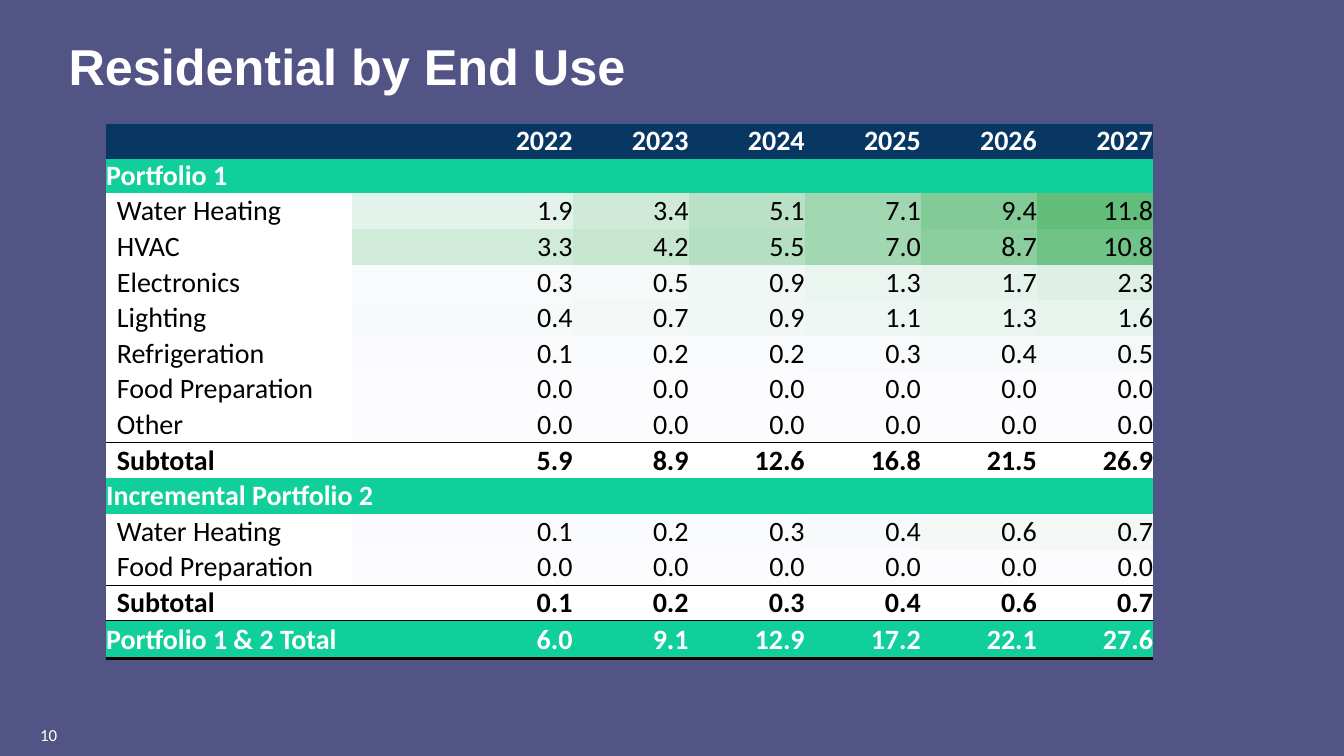
from lxml import etree
from pptx import Presentation
from pptx.dml.color import RGBColor
from pptx.enum.text import MSO_ANCHOR, PP_ALIGN
from pptx.oxml.ns import qn
from pptx.util import Inches, Pt

BACKGROUND = RGBColor(0x53, 0x54, 0x86)
NAVY = RGBColor(0x08, 0x37, 0x63)
GREEN = RGBColor(0x10, 0xCF, 0x9B)
WHITE = RGBColor(0xFF, 0xFF, 0xFF)
BLACK = RGBColor(0x00, 0x00, 0x00)
HEAT_LOW = RGBColor(0xFC, 0xFC, 0xFF)
HEAT_HIGH = RGBColor(0x63, 0xBE, 0x7B)
HEAT_MAXIMUM = 11.8
NO_STYLE_NO_GRID = "{2D5ABB26-0587-4C30-8999-92F81FD0307C}"

TABLE_WIDTH, TABLE_HEIGHT = 7.79, 3.98
LABEL_WIDTH, FIRST_YEAR_WIDTH = 1.83, 1.64
HEADING_HEIGHT, TOTAL_HEIGHT = 0.26, 0.28
HEADING_ROWS = 2

# Row kind, label, one value per year
ROWS = [
    ("header", "", "2022 2023 2024 2025 2026 2027"),
    ("section", "Portfolio 1", ""),
    ("item", "Water Heating", "1.9 3.4 5.1 7.1 9.4 11.8"),
    ("item", "HVAC", "3.3 4.2 5.5 7.0 8.7 10.8"),
    ("item", "Electronics", "0.3 0.5 0.9 1.3 1.7 2.3"),
    ("item", "Lighting", "0.4 0.7 0.9 1.1 1.3 1.6"),
    ("item", "Refrigeration", "0.1 0.2 0.2 0.3 0.4 0.5"),
    ("item", "Food Preparation", "0.0 0.0 0.0 0.0 0.0 0.0"),
    ("item", "Other", "0.0 0.0 0.0 0.0 0.0 0.0"),
    ("subtotal", "Subtotal", "5.9 8.9 12.6 16.8 21.5 26.9"),
    ("merged section", "Incremental Portfolio 2", ""),
    ("item", "Water Heating", "0.1 0.2 0.3 0.4 0.6 0.7"),
    ("item", "Food Preparation", "0.0 0.0 0.0 0.0 0.0 0.0"),
    ("subtotal", "Subtotal", "0.1 0.2 0.3 0.4 0.6 0.7"),
    ("total", "Portfolio 1 & 2 Total", "6.0 9.1 12.9 17.2 22.1 27.6"),
]
ROW_FILLS = {"header": NAVY, "section": GREEN, "merged section": GREEN,
             "item": WHITE, "subtotal": WHITE, "total": GREEN}


def heat_color(value):
    """Blend from the low to the high colour in proportion to the value."""
    share = value / HEAT_MAXIMUM
    return RGBColor(*(round(low + (high - low) * share)
                      for low, high in zip(HEAT_LOW, HEAT_HIGH)))


class SlideBuilder:
    def __init__(self, presentation):
        self.slide = presentation.slides.add_slide(presentation.slide_layouts[5])
        self.slide.background.fill.solid()
        self.slide.background.fill.fore_color.rgb = BACKGROUND

    def add_run(self, paragraph, text, size, color, bold=False, font="Calibri"):
        run = paragraph.add_run()
        run.text = text
        run.font.name = font
        run.font.size = Pt(size)
        run.font.bold = bold
        run.font.color.rgb = color

    def add_title(self, text):
        title = self.slide.shapes.title
        title.left, title.top = Inches(0.41), Inches(0.05)
        title.width, title.height = Inches(9.49), Inches(0.87)
        title.text_frame.vertical_anchor = MSO_ANCHOR.MIDDLE
        paragraph = title.text_frame.paragraphs[0]
        paragraph.alignment = PP_ALIGN.LEFT
        self.add_run(paragraph, text, 27, WHITE, bold=True, font="Arial")

    def add_page_number(self, text):
        box = self.slide.shapes.add_textbox(Inches(0.2), Inches(5.34),
                                            Inches(0.75), Inches(0.25))
        box.text_frame.word_wrap = True
        self.add_run(box.text_frame.paragraphs[0], text, 9, WHITE)

    def add_border(self, cell, side, width):
        """Draw one side of a cell; a width of 0 means no line."""
        properties = cell._tc.get_or_add_tcPr()
        line = etree.SubElement(properties, qn(f"a:ln{side}"), w=str(Pt(width)))
        if width:
            fill = etree.SubElement(line, qn("a:solidFill"))
            etree.SubElement(fill, qn("a:srgbClr"), val=str(BLACK))
        else:
            etree.SubElement(line, qn("a:noFill"))

    def fill_cell(self, cell, text, kind, is_label, borders):
        for side in "LRTB":
            self.add_border(cell, side, borders.get(side, 0))
        is_heat = kind == "item" and not is_label
        cell.fill.solid()
        cell.fill.fore_color.rgb = heat_color(float(text)) if is_heat else ROW_FILLS[kind]
        is_indented = is_label and kind in ("item", "subtotal")
        cell.margin_left = Inches(0.08 if is_indented else 0)
        cell.margin_right = cell.margin_top = cell.margin_bottom = 0
        at_bottom = kind in ("header", "section")
        cell.vertical_anchor = MSO_ANCHOR.BOTTOM if at_bottom else MSO_ANCHOR.MIDDLE
        paragraph = cell.text_frame.paragraphs[0]
        paragraph.alignment = PP_ALIGN.LEFT if is_label else PP_ALIGN.RIGHT
        if text:
            color = BLACK if kind in ("item", "subtotal") else WHITE
            self.add_run(paragraph, text, 15, color, bold=kind != "item")
        else:
            # Keeps an empty cell from stretching its row
            etree.SubElement(paragraph._p, qn("a:endParaRPr"), sz="1500")

    def add_table(self, rows):
        year_count = len(rows[0][2].split())
        frame = self.slide.shapes.add_table(
            len(rows), year_count + 1, Inches(0.79), Inches(0.92),
            Inches(TABLE_WIDTH), Inches(TABLE_HEIGHT))
        table = frame.table
        table.first_row = table.horz_banding = False
        for style in frame.element.iter(qn("a:tableStyleId")):
            style.text = NO_STYLE_NO_GRID

        year_width = (TABLE_WIDTH - LABEL_WIDTH - FIRST_YEAR_WIDTH) / (year_count - 1)
        widths = [LABEL_WIDTH, FIRST_YEAR_WIDTH] + [year_width] * (year_count - 1)
        for column, width in zip(table.columns, widths):
            column.width = Inches(width)

        body_rows = len(rows) - HEADING_ROWS - 1
        body_height = (TABLE_HEIGHT - HEADING_ROWS * HEADING_HEIGHT - TOTAL_HEIGHT) / body_rows
        heights = [HEADING_HEIGHT] * HEADING_ROWS + [body_height] * body_rows + [TOTAL_HEIGHT]
        next_kinds = [kind for kind, _, _ in rows[1:]] + [None]
        for index, (kind, label, values) in enumerate(rows):
            table.rows[index].height = Inches(heights[index])
            borders = {}
            if kind in ("subtotal", "total"):
                borders["T"] = 0.5
            if kind == "total":
                borders["B"] = 2
            elif next_kinds[index] in ("subtotal", "total"):
                borders["B"] = 0.5
            texts = [label] + (values.split() or [""] * year_count)
            for column, text in enumerate(texts):
                self.fill_cell(table.cell(index, column), text, kind, column == 0, borders)
            if kind == "merged section":
                table.cell(index, 0).merge(table.cell(index, year_count))


def main():
    presentation = Presentation()
    presentation.slide_width = Inches(10)
    presentation.slide_height = presentation.slide_width * 9 // 16
    builder = SlideBuilder(presentation)
    builder.add_page_number("10")
    builder.add_title("Residential by End Use")
    builder.add_table(ROWS)
    presentation.save("out.pptx")


if __name__ == "__main__":
    main()
